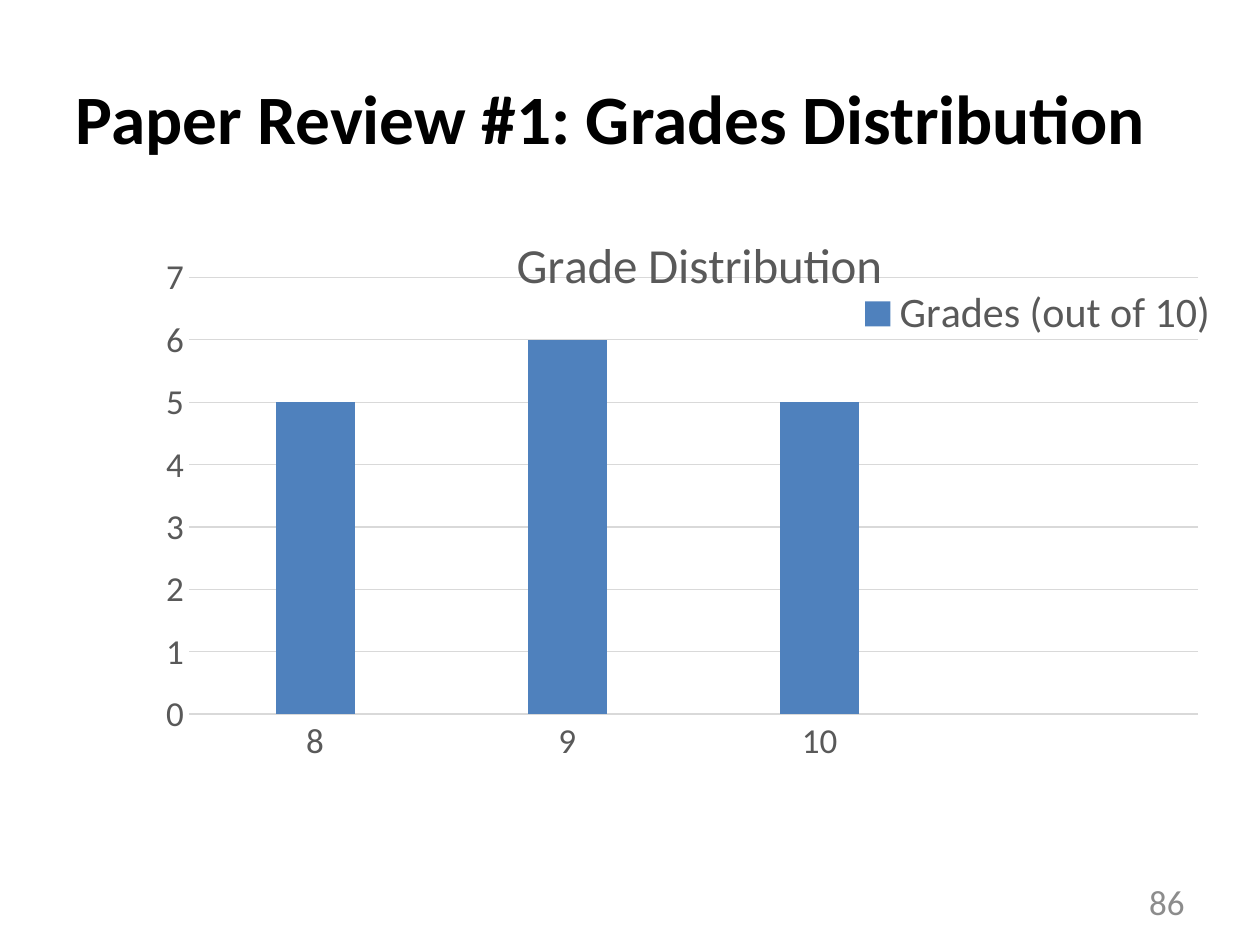
"""Build a slide with a column chart of paper review grades."""
from lxml import etree
from pptx import Presentation
from pptx.chart import data
from pptx.dml import color
from pptx.enum import chart as kinds, text
from pptx.oxml import ns
from pptx.util import Pt

COLORS = {"title": "000000", "label": "595959", "number": "8C8C8C",
          "grid": "D9D9D9", "bar": "4F81BD"}
FONT = "Calibri"


def rgb(name):
    """Return the named colour."""
    return color.RGBColor.from_string(COLORS[name])


def apply(target, values):
    """Set every attribute named in a dict of format values."""
    for name, value in values.items():
        setattr(target, name, value)


def style_font(font, size, shade, bold=False):
    """Give a font its face, size, weight and colour."""
    apply(font, {"name": FONT, "size": Pt(size), "bold": bold})
    font.color.rgb = rgb(shade)


def fill_box(box, bounds, words, size, shade, align, bold=False):
    """Place a text shape and write one styled line in it."""
    apply(box, dict(zip(("left", "top", "width", "height"), map(Pt, bounds))))
    frame = box.text_frame
    apply(frame, {"word_wrap": True, "vertical_anchor": text.MSO_ANCHOR.MIDDLE,
                  "auto_size": text.MSO_AUTO_SIZE.NONE})
    para = frame.paragraphs[0]
    para.alignment = align
    span = para.add_run()
    span.text = words
    style_font(span.font, size, shade, bold)


def place_part(part, **settings):
    """Give a chart part a manual layout."""
    layout = part.find(ns.qn("c:layout"))
    if layout is None:
        layout = etree.Element(ns.qn("c:layout"))
        overlay = part.find(ns.qn("c:overlay"))
        if overlay is None:
            part.insert(0, layout)
        else:
            overlay.addprevious(layout)
    for child in list(layout):
        layout.remove(child)
    manual = etree.SubElement(layout, ns.qn("c:manualLayout"))
    for name, value in settings.items():
        etree.SubElement(manual, ns.qn(f"c:{name}")).set("val", str(value))


def style_axis(axis):
    """Format the labels of an axis and hide its ticks."""
    apply(axis, {"major_tick_mark": kinds.XL_TICK_MARK.NONE,
                 "minor_tick_mark": kinds.XL_TICK_MARK.NONE})
    style_font(axis.tick_labels.font, 20, "label")


def style_line(line):
    """Draw a thin grid-coloured line."""
    line.color.rgb = rgb("grid")
    line.width = Pt(0.75)


def add_grades(page):
    """Add the column chart of grades."""
    grades = data.CategoryChartData()
    grades.categories = ["8", "9", "10", ""]
    grades.add_series("Grades (out of 10)", (5, 6, 5, None))
    bounds = map(Pt, (84.24, 109.44, 624.24, 358.56))
    chart = page.shapes.add_chart(
        kinds.XL_CHART_TYPE.COLUMN_CLUSTERED, *bounds, grades).chart
    style_font(chart.font, 10, "title")

    plot = chart.plots[0]
    apply(plot, {"gap_width": 219, "overlap": -27, "vary_by_categories": False})
    bars = plot.series[0].format.fill
    bars.solid()
    bars.fore_color.rgb = rgb("bar")

    across, upward = chart.category_axis, chart.value_axis
    style_axis(across)
    style_line(across.format.line)
    style_axis(upward)
    apply(upward, {"minimum_scale": 0, "maximum_scale": 7, "major_unit": 1})
    upward.format.line.fill.background()
    style_line(upward.major_gridlines.format.line)

    heading = chart.chart_title
    heading.text_frame.text = "Grade Distribution"
    style_font(heading.text_frame.paragraphs[0].runs[0].font, 28, "label")
    chart.has_legend = True
    apply(chart.legend, {"position": kinds.XL_LEGEND_POSITION.RIGHT,
                         "include_in_layout": True})
    style_font(chart.legend.font, 24, "label")

    edge = {"xMode": "edge", "yMode": "edge"}
    place_part(heading._element, **edge, x=0.33, y=0.05)
    place_part(chart.legend._element, **edge, x=0.65, y=0.15, w=0.33, h=0.09)
    area = chart._chartSpace.find(".//" + ns.qn("c:plotArea"))
    place_part(area, layoutTarget="inner", **edge,
               x=0.038, y=0.137, w=0.924, h=0.696)


def main():
    """Build and save the deck."""
    deck = Presentation()
    apply(deck, {"slide_width": Pt(720), "slide_height": Pt(540)})
    page = deck.slides.add_slide(deck.slide_layouts[5])
    fill_box(page.shapes.title, (36, 21.6, 648, 90),
             "Paper Review #1: Grades Distribution", 39.6, "title",
             text.PP_ALIGN.LEFT, bold=True)
    number = page.shapes.add_textbox(0, 0, 0, 0)
    fill_box(number, (516, 500.5, 168, 28.8), "86", 20, "number",
             text.PP_ALIGN.RIGHT)
    add_grades(page)
    deck.save("out.pptx")


if __name__ == "__main__":
    main()
